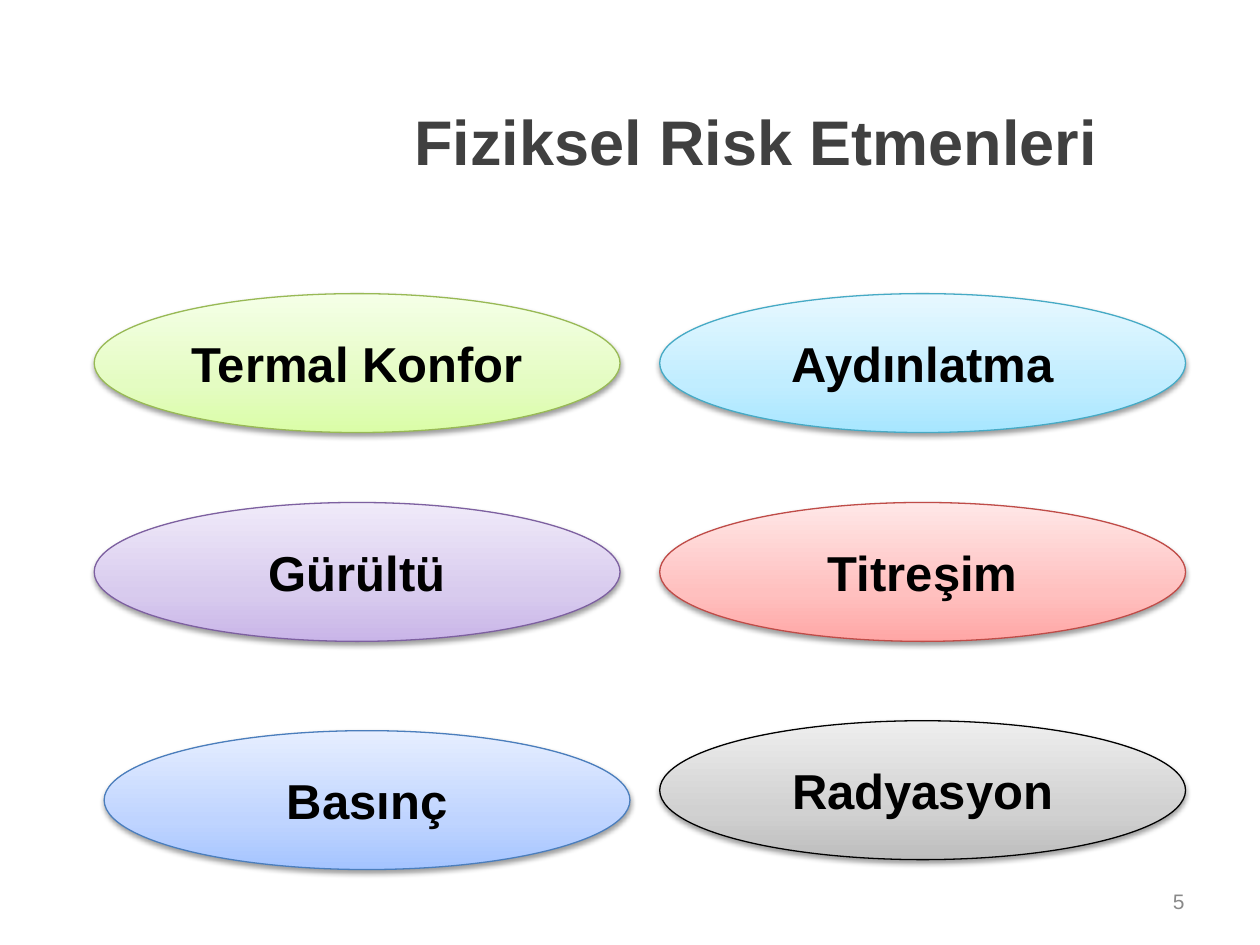
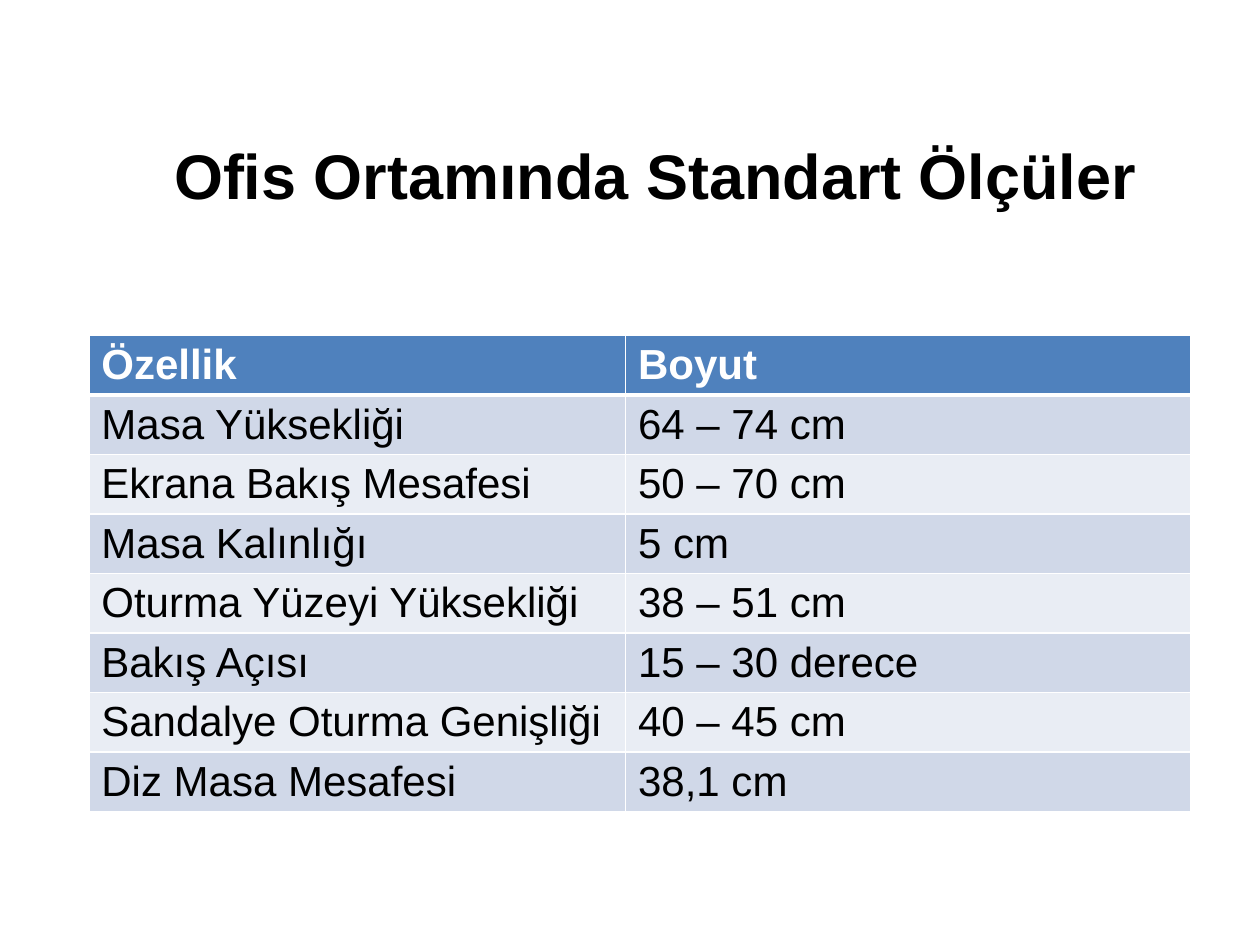
from lxml import etree
from pptx import Presentation
from pptx import util as u
from pptx.dml.color import RGBColor
from pptx.enum import shapes, text
from pptx.oxml.ns import qn

FONT = "Arial"
COLOURS = {
    "black": "000000",
    "white": "FFFFFF",
    "title grey": "404040",
    "number grey": "898989",
    "header": "4F81BD",
    "odd row": "D0D8E8",
    "even row": "E9EDF4",
}
# Each palette: outline, then gradient from bottom to top
PALETTES = {
    "green": ("98B955", "DAFDA7", "E4FCC2", "F5FFE7"),
    "cyan": ("46AAC5", "A7E6FF", "C1EDFF", "E7F8FF"),
    "purple": ("7D60A0", "C9B5E8", "D8CBEE", "F0EAF9"),
    "red": ("BF4C48", "FFA6A5", "FFC0BF", "FFE7E7"),
    "blue": ("4B7EBC", "A4C4FF", "BFD4FF", "E6EEFF"),
    "grey": ("000000", "BDBDBD", "D1D1D1", "EEEEEE"),
}
GRADIENT_POSITIONS = (0, 35, 100)

RISK_TITLE = "Fiziksel Risk Etmenleri"
RISK_NUMBER = "5"
LEFT_X, RIGHT_X = 1.9, 13.3
RISKS = [  # name, palette, left and top in cm
    ("Termal Konfor", "green", LEFT_X, 5.92),
    ("Aydınlatma", "cyan", RIGHT_X, 5.92),
    ("Gürültü", "purple", LEFT_X, 10.13),
    ("Titreşim", "red", RIGHT_X, 10.13),
    ("Basınç", "blue", 2.1, 14.73),
    ("Radyasyon", "grey", RIGHT_X, 14.53),
]

OFFICE_TITLE = "Ofis Ortamında Standart Ölçüler"
OFFICE_COLUMNS = (10.82, 11.4)
OFFICE_ROW_HEIGHT = 1.2
OFFICE_ROWS = [
    ("Özellik", "Boyut"),
    ("Masa Yüksekliği", "64 – 74 cm"),
    ("Ekrana Bakış Mesafesi", "50 – 70 cm"),
    ("Masa Kalınlığı", "5 cm"),
    ("Oturma Yüzeyi Yüksekliği", "38 – 51 cm"),
    ("Bakış Açısı", "15 – 30 derece"),
    ("Sandalye Oturma Genişliği", "40 – 45 cm"),
    ("Diz Masa Mesafesi", "38,1 cm"),
]


def rgb(name):
    return RGBColor.from_string(COLOURS[name])


def write(frame, words, size, colour, bold=False, align=None):
    frame.text = words
    paragraph = frame.paragraphs[0]
    paragraph.alignment = align
    font = paragraph.font
    font.name, font.size, font.bold = FONT, u.Pt(size), bold
    font.color.rgb = rgb(colour)


def add_titled_slide(presentation, words, colour, left, height, indent=0.25):
    """Add a title-only slide; the indent moves the centred title to the right."""
    slide = presentation.slides.add_slide(presentation.slide_layouts[5])
    title = slide.shapes.title
    title.left, title.top = u.Cm(left), u.Cm(1.93)
    title.width, title.height = u.Cm(22.23), u.Cm(height)
    frame = title.text_frame
    write(frame, words, 36, colour, True, text.PP_ALIGN.CENTER)
    frame.margin_left = u.Cm(indent)
    frame.vertical_anchor = text.MSO_ANCHOR.MIDDLE
    frame.auto_size = text.MSO_AUTO_SIZE.NONE
    return slide


def add_colour(parent, value):
    return etree.SubElement(parent, qn("a:srgbClr"), val=value)


def fill_gradient(shape, stops):
    shape.fill.gradient()
    shape.fill.gradient_angle = 90
    stop_list = shape.element.spPr.find(".//" + qn("a:gsLst"))
    for stop in list(stop_list):
        stop_list.remove(stop)
    for position, value in zip(GRADIENT_POSITIONS, stops):
        stop = etree.SubElement(stop_list, qn("a:gs"), pos=str(position * 1000))
        add_colour(stop, value)


def add_soft_shadow(shape):
    shape.shadow.inherit = False
    effects = shape.element.spPr.find(qn("a:effectLst"))
    shadow = etree.SubElement(
        effects, qn("a:outerShdw"), blurRad=str(u.Pt(3.1)), dist=str(u.Pt(1.6)),
        dir="5400000", rotWithShape="0")
    colour = add_colour(shadow, COLOURS["black"])
    etree.SubElement(colour, qn("a:alpha"), val="38000")


def add_risk(slide, name, palette, left, top):
    outline, *stops = PALETTES[palette]
    ellipse = slide.shapes.add_shape(
        shapes.MSO_SHAPE.OVAL, u.Cm(left), u.Cm(top), u.Cm(10.6), u.Cm(2.8))
    fill_gradient(ellipse, stops)
    ellipse.line.color.rgb = RGBColor.from_string(outline)
    ellipse.line.width = u.Pt(0.75)
    add_soft_shadow(ellipse)
    write(ellipse.text_frame, name, 28, "black", True, text.PP_ALIGN.CENTER)
    ellipse.text_frame.vertical_anchor = text.MSO_ANCHOR.MIDDLE


def set_borders(cell, bottom=1, top=1):
    properties = cell._tc.get_or_add_tcPr()
    widths = {"a:lnL": 1, "a:lnR": 1, "a:lnT": top, "a:lnB": bottom}
    for index, (tag, width) in enumerate(widths.items()):
        line = etree.Element(qn(tag), w=str(u.Pt(width)))
        add_colour(etree.SubElement(line, qn("a:solidFill")), COLOURS["white"])
        properties.insert(index, line)


def build_risk_slide(presentation):
    slide = add_titled_slide(presentation, RISK_TITLE, "title grey", 1.7, 1.8, 5.1)
    number = slide.shapes.add_textbox(u.Cm(18.2), u.Cm(17.65), u.Cm(5.93), u.Cm(1.02))
    number.text_frame.word_wrap = True
    number.text_frame.vertical_anchor = text.MSO_ANCHOR.MIDDLE
    write(number.text_frame, RISK_NUMBER, 12, "number grey", align=text.PP_ALIGN.RIGHT)
    for risk in RISKS:
        add_risk(slide, *risk)


def build_office_slide(presentation):
    slide = add_titled_slide(presentation, OFFICE_TITLE, "black", 2.1, 3.18)
    table = slide.shapes.add_table(
        len(OFFICE_ROWS), len(OFFICE_COLUMNS), u.Cm(1.79), u.Cm(6.76),
        u.Cm(sum(OFFICE_COLUMNS)), u.Cm(OFFICE_ROW_HEIGHT * len(OFFICE_ROWS))).table
    for column, width in zip(table.columns, OFFICE_COLUMNS):
        column.width = u.Cm(width)
    for row_index, values in enumerate(OFFICE_ROWS):
        header = row_index == 0
        band = "header" if header else "odd row" if row_index % 2 else "even row"
        table.rows[row_index].height = u.Cm(OFFICE_ROW_HEIGHT)
        for cell, value in zip(table.rows[row_index].cells, values):
            write(cell.text_frame, value, 24, "white" if header else "black", header)
            cell.fill.solid()
            cell.fill.fore_color.rgb = rgb(band)
            set_borders(cell, bottom=3 if header else 1, top=3 if row_index == 1 else 1)


def main():
    presentation = Presentation()
    presentation.slide_width, presentation.slide_height = u.Cm(25.4), u.Cm(19.05)
    build_risk_slide(presentation)
    build_office_slide(presentation)
    presentation.save("out.pptx")


if __name__ == "__main__":
    main()
